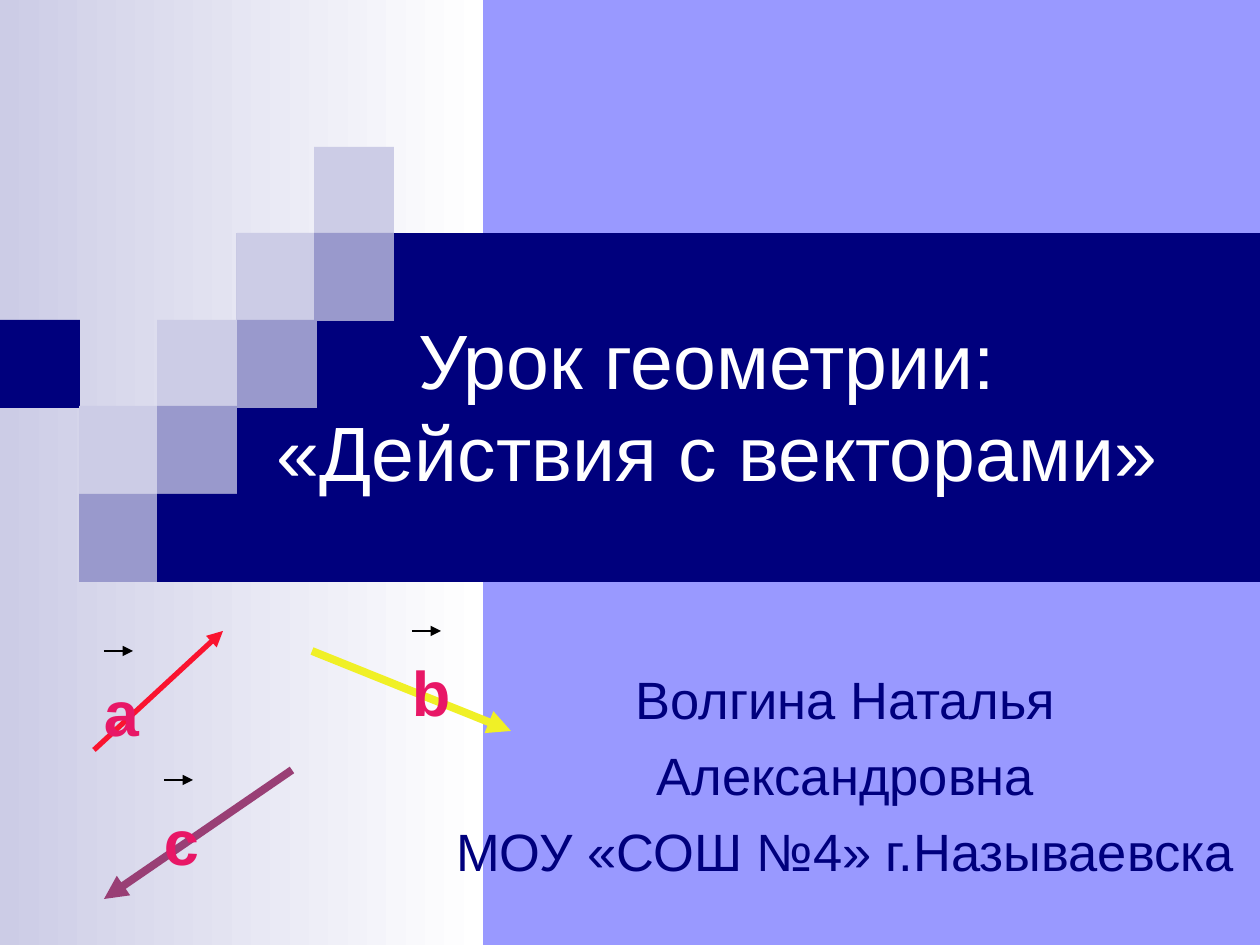
"""Build the title slide of a geometry lesson on vectors."""
from dataclasses import dataclass

from pptx import Presentation
from pptx.dml.color import RGBColor
from pptx.enum.shapes import MSO_CONNECTOR, MSO_SHAPE
from pptx.enum.text import MSO_ANCHOR, PP_ALIGN
from pptx.oxml.ns import qn
from pptx.util import Emu, Pt
from lxml import etree

RECT = MSO_SHAPE.RECTANGLE
STRAIGHT = MSO_CONNECTOR.STRAIGHT
CENTER = PP_ALIGN.CENTER
TOP, MIDDLE = MSO_ANCHOR.TOP, MSO_ANCHOR.MIDDLE
SCALE = 914400 // 126
WIDTH, HEIGHT = 1260, 945


@dataclass(frozen=True)
class Theme:
    font: str = "Arial"
    background: str = "9999FF"
    navy: str = "00007D"
    mid: str = "9999CC"
    light: str = "CCCCE6"
    white: str = "FFFFFF"
    black: str = "000000"
    letter: str = "E81766"
    red: str = "FA142F"
    yellow: str = "F0F026"
    purple: str = "993F75"
    title_size: int = 44
    subtitle_size: int = 30
    letter_size: int = 36


def px(n):
    return Emu(n * SCALE)


def rgb(color):
    return RGBColor.from_string(color)


class Painter:
    def __init__(self, slide, theme):
        self.slide = slide
        self.theme = theme

    def background(self, color):
        fill = self.slide.background.fill
        fill.solid()
        fill.fore_color.rgb = rgb(color)

    def rect(self, x, y, w, h, color, end_color=None):
        sp = self.slide.shapes.add_shape(RECT, px(x), px(y), px(w), px(h))
        sp.shadow.inherit = False
        sp.line.fill.background()
        if end_color:
            sp.fill.gradient()
            sp.fill.gradient_angle = 0
            for stop, c in zip(sp.fill.gradient_stops, (color, end_color)):
                stop.color.rgb = rgb(c)
        else:
            sp.fill.solid()
            sp.fill.fore_color.rgb = rgb(color)

    def text(self, x, y, w, h, lines, size, color, bold=False, wrap=True,
             anchor=TOP, before=0, inset=(13, 6)):
        sp = self.slide.shapes.add_textbox(px(x), px(y), px(w), px(h))
        tf = sp.text_frame
        tf.word_wrap = wrap
        tf.vertical_anchor = anchor
        tf.margin_left = tf.margin_right = px(inset[0])
        tf.margin_top = tf.margin_bottom = px(inset[1])
        tf.text = "\n".join(lines)
        for p in tf.paragraphs:
            p.alignment = CENTER
            p.space_before = Pt(before)
            for r in p.runs:
                r.font.name = self.theme.font
                r.font.size = Pt(size)
                r.font.bold = bold
                r.font.color.rgb = rgb(color)

    def arrow(self, x1, y1, x2, y2, color, width):
        cn = self.slide.shapes.add_connector(
            STRAIGHT, px(x1), px(y1), px(x2), px(y2))
        cn.line.color.rgb = rgb(color)
        cn.line.width = Pt(width)
        ln = cn.line._get_or_add_ln()
        etree.SubElement(ln, qn("a:tailEnd"), type="triangle")
        etree.SubElement(cn._element.spPr, qn("a:effectLst"))

    def vector_name(self, x, y, letter):
        t = self.theme
        self.text(x, y + 10, 30, 37, [letter], t.letter_size, t.letter,
                  bold=True, wrap=False, inset=(0, 13))
        self.arrow(x, y, x + 29, y, t.black, 0.75)


def main():
    t = Theme()
    prs = Presentation()
    prs.slide_width, prs.slide_height = px(WIDTH), px(HEIGHT)
    s = prs.slides.add_slide(prs.slide_layouts[6])
    paint = Painter(s, t)

    paint.background(t.background)
    paint.rect(0, 0, 483, HEIGHT, t.light, t.white)
    paint.rect(237, 233, WIDTH - 237, 349, t.navy)

    columns = (0, 79, 157, 237, 314)
    rows = (147, 233, 320, 406, 494)
    mosaic = ("....L", "...LM", "N.LM.", ".LM..", ".MN..")
    shades = {"L": t.light, "M": t.mid, "N": t.navy}
    for y, pattern in zip(rows, mosaic):
        for x, key in zip(columns, pattern):
            if key in shades:
                paint.rect(x, y, 80, 88, shades[key])

    paint.text(174, 252, 1066, 305,
               ["Урок геометрии:\v «Действия с векторами»"],
               t.title_size, t.white, anchor=MIDDLE)
    paint.text(431, 661, 829, 242,
               ["Волгина Наталья", "Александровна",
                "МОУ «СОШ №4» г.Называевска"],
               t.subtitle_size, t.navy, before=7.5)

    paint.arrow(94, 750, 223, 631, t.red, 3)
    paint.arrow(312, 651, 511, 731, t.yellow, 4.5)
    paint.arrow(292, 770, 104, 899, t.purple, 4.5)

    for x, y, letter in ((104, 651, "а"), (164, 780, "c"), (412, 631, "b")):
        paint.vector_name(x, y, letter)

    prs.save("out.pptx")


if __name__ == "__main__":
    main()
